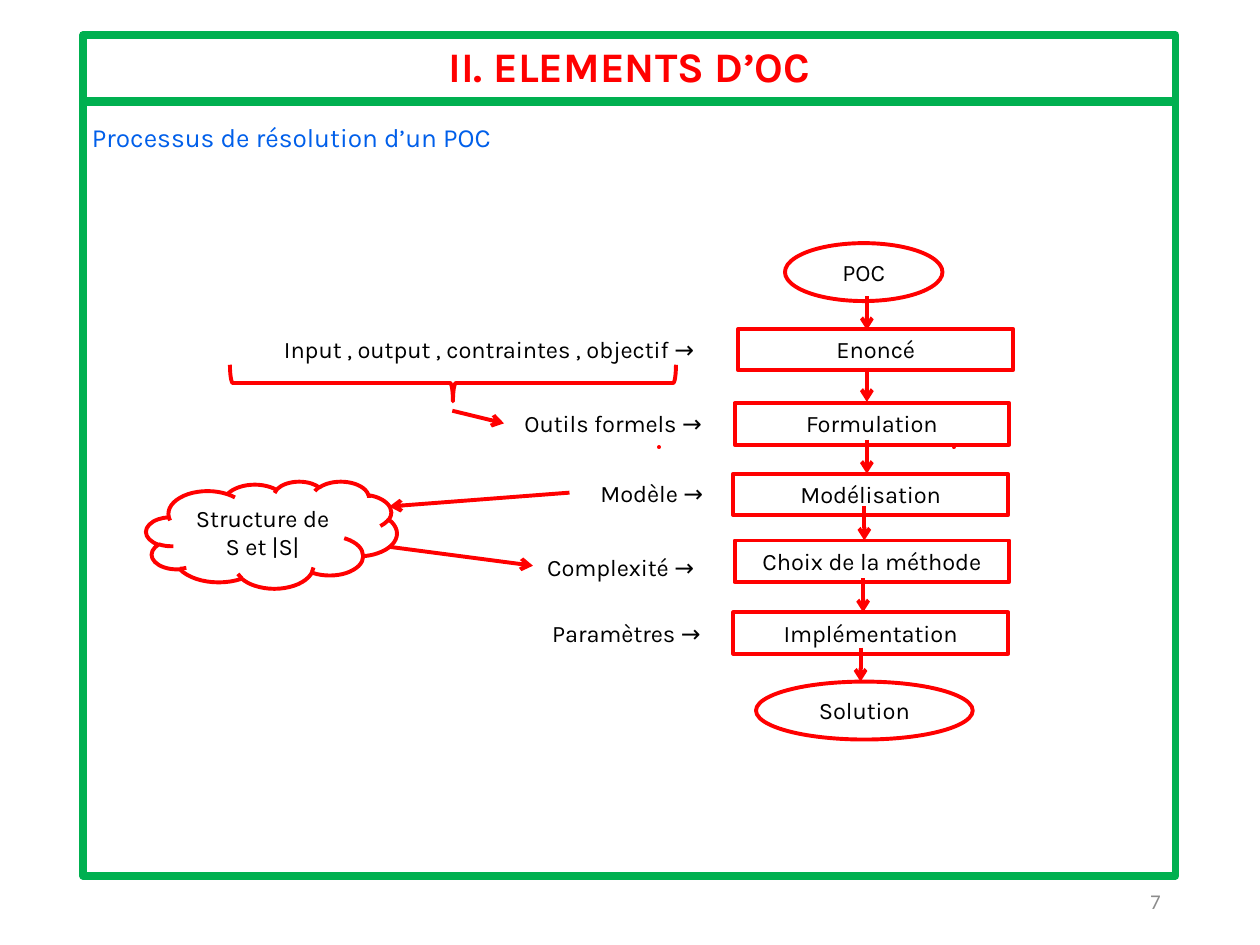
from dataclasses import dataclass

from lxml.etree import SubElement
from pptx import Presentation
from pptx.dml.color import RGBColor
from pptx.enum.shapes import MSO_CONNECTOR, MSO_SHAPE
from pptx.enum.text import MSO_ANCHOR, PP_ALIGN
from pptx.oxml.ns import qn
from pptx.slide import Slide
from pptx.util import Inches, Pt

RED = RGBColor(0xFF, 0x00, 0x00)
GREEN = RGBColor(0x00, 0xB0, 0x50)
BLUE = RGBColor(0x00, 0x5F, 0xEA)
BLACK = RGBColor(0x00, 0x00, 0x00)
WHITE = RGBColor(0xFF, 0xFF, 0xFF)
GREY = RGBColor(0x8C, 0x8C, 0x8C)


def write(shape, text, size=13.5, font="Karla", color=BLACK, bold=False,
          align=PP_ALIGN.CENTER, anchor=MSO_ANCHOR.TOP, space=None,
          side=0.1, right=None, top=0.05):
    """Put formatted text into a shape."""
    frame = shape.text_frame
    frame.word_wrap = True
    frame.vertical_anchor = anchor
    frame.margin_left = Inches(side)
    frame.margin_right = Inches(side if right is None else right)
    frame.margin_top = frame.margin_bottom = Inches(top)
    para = frame.paragraphs[0]
    para.alignment = align
    para.line_spacing = space
    run = para.add_run()
    run.text = text
    run.font.name = font
    run.font.size = Pt(size)
    run.font.bold = bold
    run.font.color.rgb = color


@dataclass
class Chart:
    """Draw the parts of the flow chart on one slide."""

    slide: Slide
    line: RGBColor = RED
    width: float = 2.25

    def shape(self, kind, x, y, w, h, fill=None, line=RED, width=None):
        """Add a preset shape."""
        item = self.slide.shapes.add_shape(
            kind, Inches(x), Inches(y), Inches(w), Inches(h))
        item.shadow.inherit = False
        if fill is None:
            item.fill.background()
        else:
            item.fill.solid()
            item.fill.fore_color.rgb = fill
        if line is None:
            item.line.fill.background()
        else:
            item.line.color.rgb = line
            item.line.width = Pt(width or self.width)
        return item

    def frame(self, y, h, text, **style):
        """Add a green frame with its heading."""
        item = self.shape(MSO_SHAPE.RECTANGLE, 0.66, y, 8.67, h,
                          line=GREEN, width=4.5)
        write(item, text, side=0.07, top=0.04, **style)

    def step(self, x, y, text):
        """Add a boxed step."""
        item = self.shape(MSO_SHAPE.RECTANGLE, x, y, 2.18, 0.33, WHITE)
        write(item, text)

    def oval(self, x, y, w, text):
        """Add a start or end oval."""
        write(self.shape(MSO_SHAPE.OVAL, x, y, w, 0.46), text)

    def label(self, x, y, w, text, right=0.1):
        """Add a label that points to a step."""
        item = self.shape(MSO_SHAPE.RECTANGLE, x, y, w, 0.33, WHITE, None)
        write(item, text + " →", align=PP_ALIGN.RIGHT, right=right)

    def arrow(self, x1, y1, x2, y2):
        """Add a line with an open arrowhead."""
        item = self.slide.shapes.add_connector(
            MSO_CONNECTOR.STRAIGHT,
            Inches(x1), Inches(y1), Inches(x2), Inches(y2))
        item.line.color.rgb = self.line
        item.line.width = Pt(self.width)
        SubElement(item.line._get_or_add_ln(), qn("a:tailEnd"), type="arrow")
        SubElement(item._element.spPr, qn("a:effectLst"))

    def cloud(self, x, y, w, h, text):
        """Add a thought cloud."""
        write(self.shape(MSO_SHAPE.CLOUD, x, y, w, h), text)

    def brace(self, x, y, w, h):
        """Add a brace that points down."""
        item = self.shape(MSO_SHAPE.RIGHT_BRACE, x, y, w, h)
        item.rotation = 90
        item.adjustments[0] = 0.08
        item.adjustments[1] = 0.5

    def number(self, text):
        """Add the page number."""
        item = self.slide.shapes.add_textbox(
            Inches(7.06), Inches(6.95), Inches(2.25), Inches(0.4))
        write(item, text, size=12, font="Calibri", color=GREY,
              align=PP_ALIGN.RIGHT, anchor=MSO_ANCHOR.MIDDLE)


def main():
    """Build and save the slide."""
    deck = Presentation()
    deck.slide_width, deck.slide_height = Inches(10), Inches(7.5)
    chart = Chart(deck.slides.add_slide(deck.slide_layouts[6]))

    chart.frame(0.28, 0.53, "II. ELEMENTS D’OC", size=24, color=RED, bold=True)
    chart.frame(0.8, 6.15, "Processus de résolution d’un POC", size=15,
                color=BLUE, align=PP_ALIGN.LEFT, space=1.5)
    for x in (5.23, 7.57):
        chart.shape(MSO_SHAPE.RECTANGLE, x, 3.55, 0, 0, RED)

    for x, y, text in (
        (5.86, 2.61, "Enoncé"),
        (5.83, 3.2, "Formulation"),
        (5.82, 3.76, "Modélisation"),
        (5.83, 4.29, "Choix de la méthode"),
        (5.82, 4.86, "Implémentation"),
    ):
        chart.step(x, y, text)
    chart.oval(6.23, 1.93, 1.25, "POC")
    chart.oval(6, 5.41, 1.72, "Solution")
    for x, y in ((6.88, 2.35), (6.88, 2.92), (6.88, 3.49),
                 (6.86, 4.02), (6.85, 4.59), (6.83, 5.14)):
        chart.arrow(x, y, x, y + 0.27)

    chart.label(1.43, 2.61, 4.27, "Input , output , contraintes , objectif", 0.19)
    chart.label(3.49, 3.2, 2.18, "Outils formels")
    chart.label(3.5, 3.75, 2.18, "Modèle")
    chart.label(3.12, 4.34, 2.53, "Complexité", 0.14)
    chart.label(3.48, 4.86, 2.18, "Paramètres")

    chart.arrow(4.52, 3.91, 3.09, 4.02)
    chart.arrow(3.09, 4.34, 4.23, 4.49)
    chart.cloud(1.16, 3.82, 1.99, 0.85, "Structure de S et |S|")
    chart.brace(3.45, 1.27, 0.29, 3.54)
    chart.arrow(3.59, 3.26, 4, 3.36)
    chart.number("7")

    deck.save("out.pptx")


if __name__ == "__main__":
    main()
